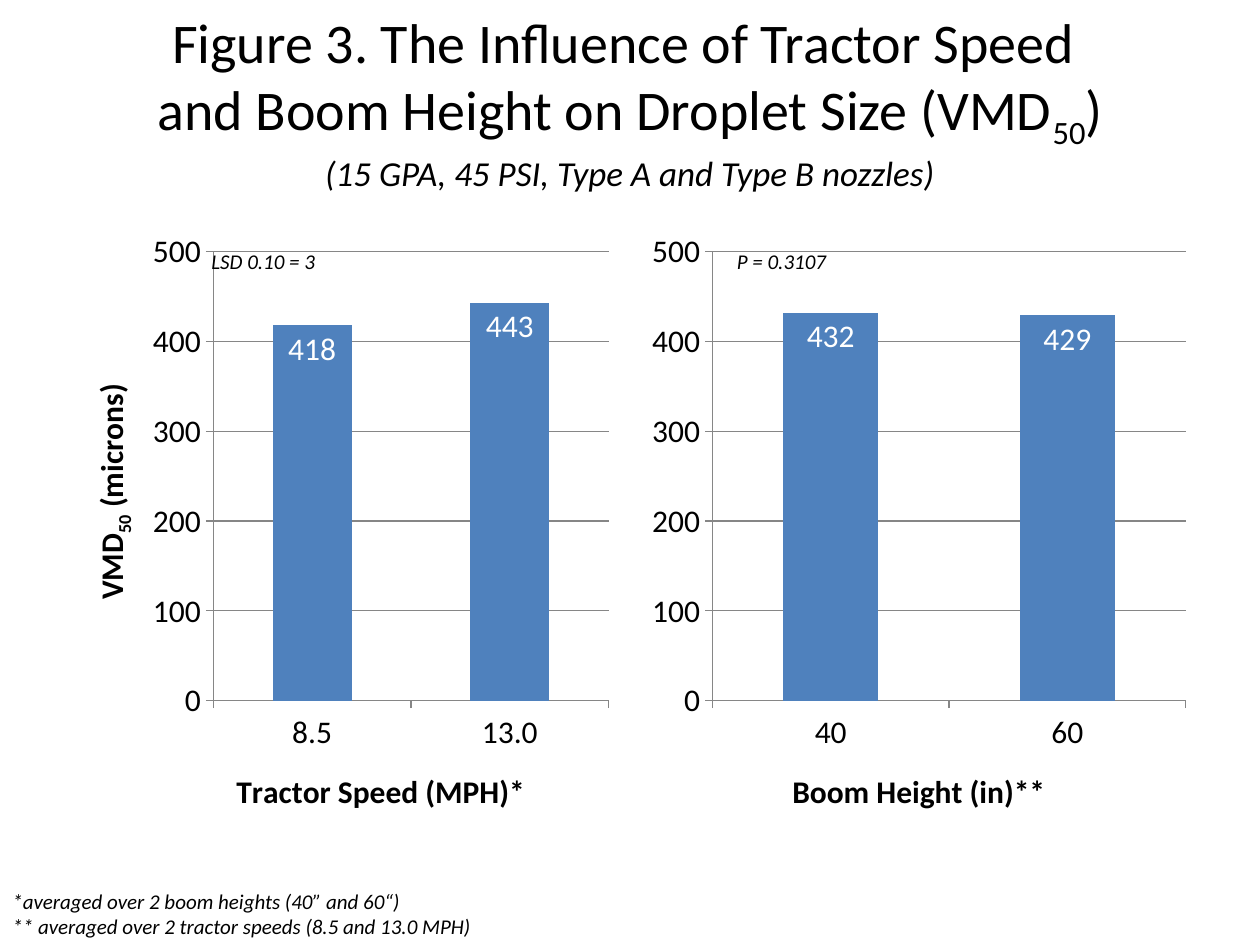
import pptx
import pptx.util
import pptx.dml.color
import pptx.chart.data
import pptx.enum.chart
import pptx.enum.text
from lxml import etree

FONT = "Calibri"
BLACK, WHITE, BLUE, GRAY = "000000", "FFFFFF", "4F81BD", "868686"
W, H = 10, 7.5
MARGIN, GAP = 0.05 * W, 0.16
COL_W = (W - 2 * MARGIN - GAP) / 2
CHART_TOP, CHART_H = 1.75, 0.66 * H


def rgb(value):
    return pptx.dml.color.RGBColor.from_string(value)


def box(left, top, width, height):
    return [pptx.util.Inches(v) for v in (left, top, width, height)]


def format_font(font, size=18, color=BLACK, bold=False, italic=False):
    font.name = FONT
    font.size = pptx.util.Pt(size)
    font.bold = bold
    font.italic = italic
    font.color.rgb = rgb(color)


def add_run(p, text, baseline=0, **fmt):
    r = p.add_run()
    r.text = text
    format_font(r.font, **fmt)
    if baseline:
        r.font._element.set("baseline", str(baseline * 1000))


def add_title(slide):
    s = slide.shapes.title
    s.left, s.top, s.width, s.height = box(MARGIN, 0.17, W - 2 * MARGIN, 1.25)
    tf = s.text_frame
    tf.vertical_anchor = pptx.enum.text.MSO_ANCHOR.MIDDLE
    p = tf.paragraphs[0]
    p.alignment = pptx.enum.text.PP_ALIGN.CENTER
    add_run(p, "Figure 3. The Influence of Tractor Speed ", size=32)
    p.add_line_break()
    add_run(p, "and Boom Height on Droplet Size (VMD", size=32)
    add_run(p, "50", size=32, baseline=-25)
    add_run(p, ")", size=32)
    p.add_line_break()
    add_run(p, "(15 GPA, 45 PSI, Type A and Type B nozzles)", size=20, italic=True)


def add_note(slide, lines, left, top, width, height):
    s = slide.shapes.add_textbox(*box(left, top, width, height))
    tf = s.text_frame
    tf.word_wrap = False
    tf.auto_size = pptx.enum.text.MSO_AUTO_SIZE.SHAPE_TO_FIT_TEXT
    for i, line in enumerate(lines):
        p = tf.add_paragraph() if i else tf.paragraphs[0]
        add_run(p, line, size=12, italic=True)


def set_plot_area(chart, **shares):
    """Fix the inner plot area, in shares of the chart's size."""
    plot_area = chart._chartSpace.chart.plotArea
    ns = plot_area.nsmap["c"]
    for old in plot_area.findall(f"{{{ns}}}layout"):
        plot_area.remove(old)
    layout = etree.Element(f"{{{ns}}}layout")
    manual = etree.SubElement(layout, f"{{{ns}}}manualLayout")
    settings = {"layoutTarget": "inner", "xMode": "edge", "yMode": "edge", **shares}
    for tag, value in settings.items():
        etree.SubElement(manual, f"{{{ns}}}{tag}").set("val", str(value))
    plot_area.insert(0, layout)


def add_axis_title(axis, *parts):
    p = axis.axis_title.text_frame.paragraphs[0]
    for text, baseline in parts:
        add_run(p, text, baseline=baseline, bold=True)


def format_axis(axis):
    format_font(axis.tick_labels.font)
    axis.major_tick_mark = pptx.enum.chart.XL_TICK_MARK.OUTSIDE
    axis.minor_tick_mark = pptx.enum.chart.XL_TICK_MARK.NONE
    axis.format.line.color.rgb = rgb(GRAY)


def add_column_chart(slide, col, cats, values, x_title, plot_x, plot_w):
    data = pptx.chart.data.CategoryChartData()
    data.categories = cats
    data.add_series("Series 1", values)
    left = MARGIN + col * (COL_W + GAP)
    chart = slide.shapes.add_chart(
        pptx.enum.chart.XL_CHART_TYPE.COLUMN_CLUSTERED,
        *box(left, CHART_TOP, COL_W, CHART_H), data).chart
    chart.has_legend = False
    chart.has_title = False
    format_font(chart.font)
    set_plot_area(chart, x=plot_x, y=0.05, w=plot_w, h=0.72)

    # Columns and their labels
    plot = chart.plots[0]
    plot.gap_width = 150
    plot.vary_by_categories = False
    fill = plot.series[0].format.fill
    fill.solid()
    fill.fore_color.rgb = rgb(BLUE)
    plot.has_data_labels = True
    labels = plot.data_labels
    labels.show_value = True
    labels.number_format = "0"
    labels.number_format_is_linked = False
    labels.position = pptx.enum.chart.XL_LABEL_POSITION.INSIDE_END
    format_font(labels.font, color=WHITE)

    # Axes
    x_axis, y_axis = chart.category_axis, chart.value_axis
    for axis in (x_axis, y_axis):
        format_axis(axis)
    y_axis.minimum_scale, y_axis.maximum_scale = 0, 500
    y_axis.major_unit = 100
    y_axis.tick_labels.number_format = "0"
    y_axis.tick_labels.number_format_is_linked = False
    y_axis.has_major_gridlines = True
    y_axis.major_gridlines.format.line.color.rgb = rgb(GRAY)
    add_axis_title(x_axis, (x_title, 0))
    return chart


def main():
    prs = pptx.Presentation()
    prs.slide_width, prs.slide_height = pptx.util.Inches(W), pptx.util.Inches(H)
    slide = prs.slides.add_slide(prs.slide_layouts[5])
    add_title(slide)

    # Charts side by side, with one value title on the left
    speed = add_column_chart(slide, 0, ["8.5", "13.0"], [418, 443],
                             "Tractor Speed (MPH)*", 0.27, 0.71)
    add_axis_title(speed.value_axis, ("VMD", 0), ("50", -25), (" (microns)", 0))
    add_column_chart(slide, 1, ["40", "60"], [432, 429],
                     "Boom Height (in)**", 0.13, 0.85)

    # Statistics and footnotes
    add_note(slide, ["LSD 0.10 = 3"], 1.58, 1.92, 1.04, 0.3)
    add_note(slide, ["P = 0.3107"], 5.75, 1.92, 0.92, 0.3)
    add_note(slide, ["*averaged over 2 boom heights (40” and 60“)",
                     "** averaged over 2 tractor speeds (8.5 and 13.0 MPH)"],
             0, H - 0.5, 3.88, 0.5)
    prs.save("out.pptx")


if __name__ == "__main__":
    main()
